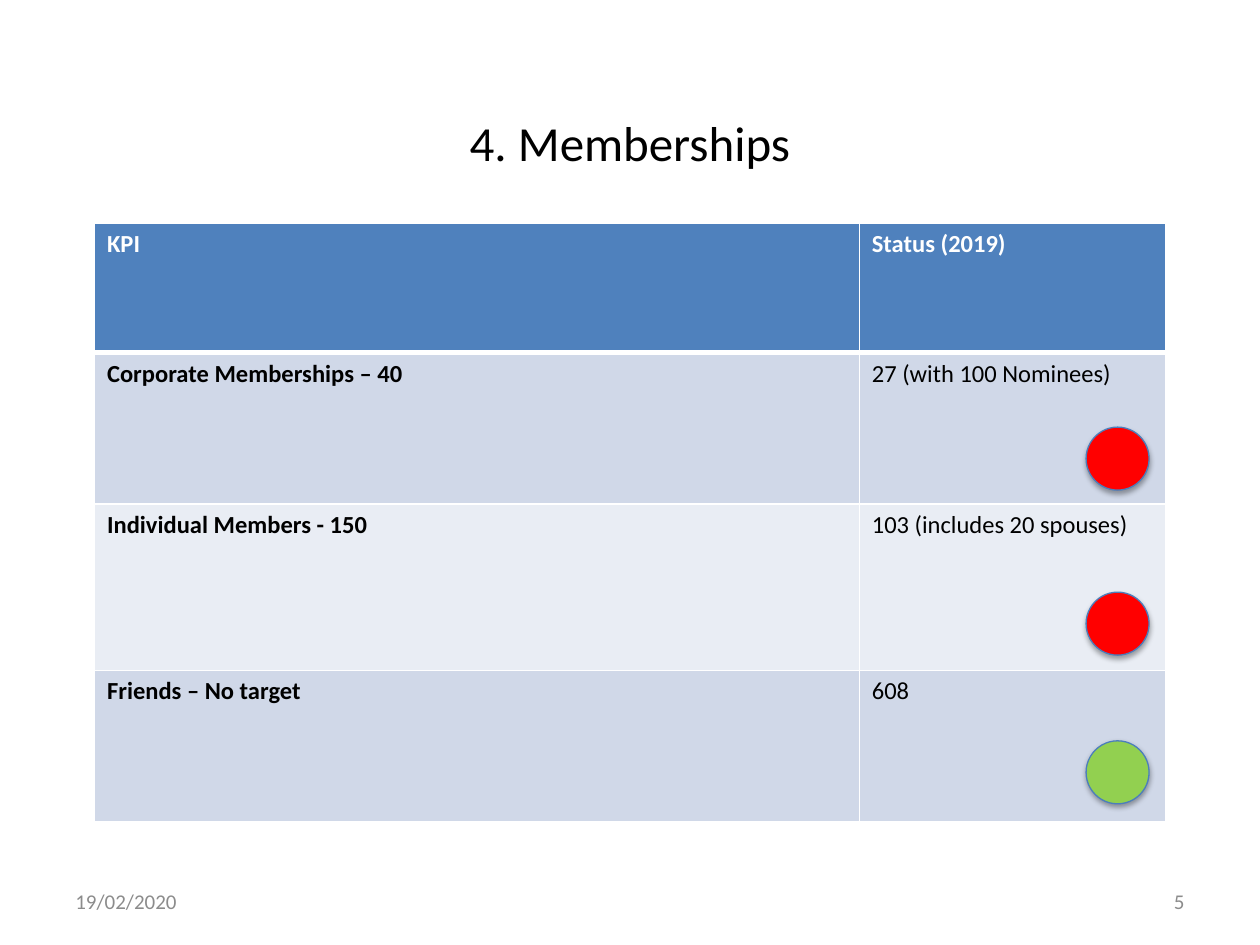
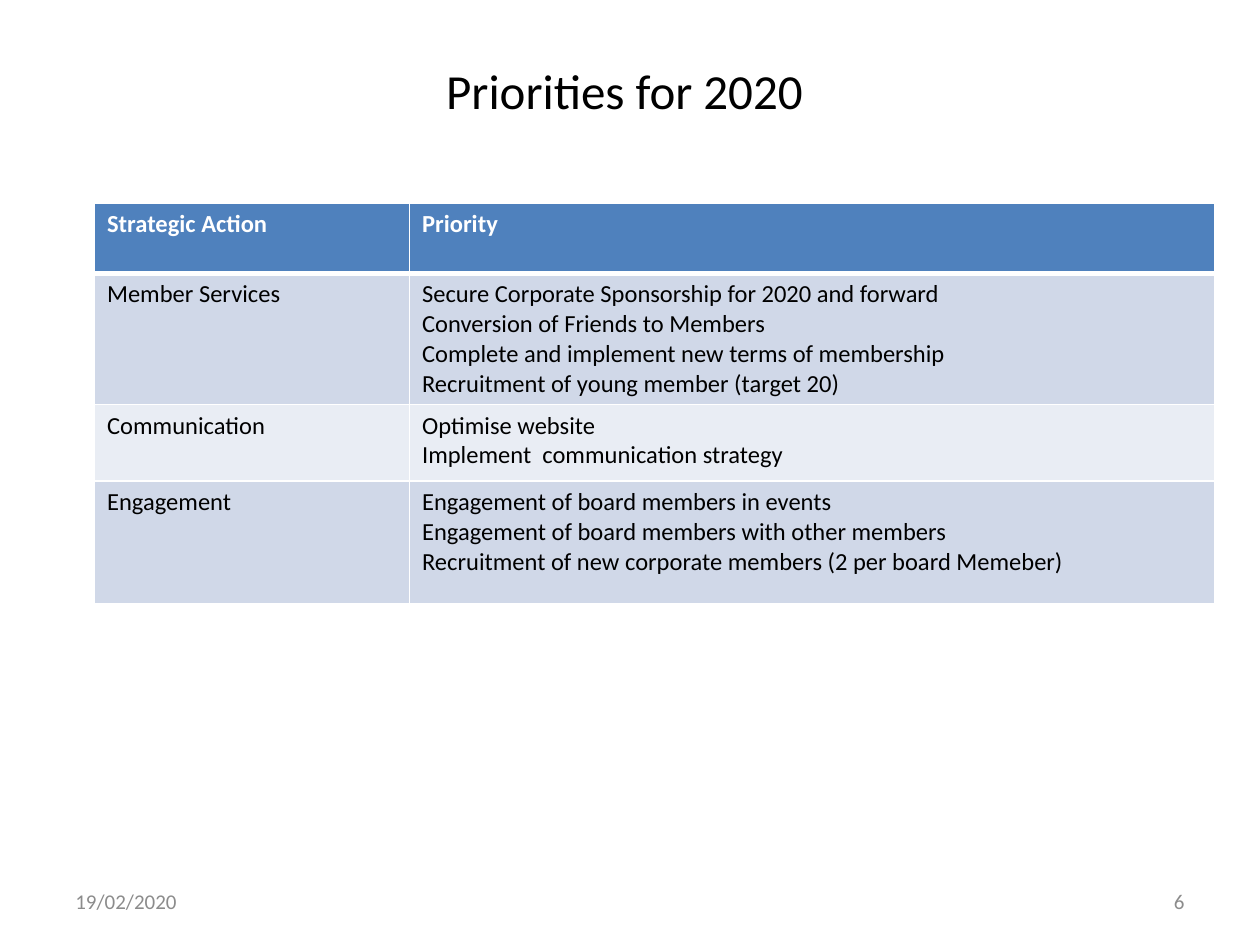
"""Build two slides: membership KPIs and the priorities for 2020."""
from lxml import etree
from pptx import Presentation
from pptx.dml.color import RGBColor
from pptx.enum.shapes import MSO_SHAPE
from pptx.enum.text import MSO_ANCHOR as ANCHOR, PP_ALIGN as ALIGN
from pptx.oxml import parse_xml
from pptx.oxml.ns import nsdecls, qn
from pptx.util import Inches, Pt

COLORS = {
    "black": "000000", "white": "FFFFFF", "grey": "8C8C8C",
    "header": "4F81BD", "band": "D0D8E8", "light": "E9EDF4",
    "outline": "4B7EBC", "red": "FF0000", "green": "92D050",
}
FORMATS = {
    "title": {"size": Pt(28), "color": "black"},
    "footer": {"size": Pt(12), "color": "grey"},
    "head": {"size": Pt(14), "color": "white", "bold": True},
    "label": {"size": Pt(14), "color": "black", "bold": True},
    "body": {"size": Pt(14), "color": "black", "bold": False},
}
FONT = "Calibri"
DATE = "19/02/2020"


class Deck:
    def __init__(self):
        self.prs = Presentation()
        self.prs.slide_width, self.prs.slide_height = Inches(10), Inches(7.5)

    def rgb(self, color):
        return RGBColor.from_string(COLORS[color])

    def slide(self, title, title_top, number):
        self.s = self.prs.slides.add_slide(self.prs.slide_layouts[6])
        self.text(title, (0.75, title_top, 8.5, 1.29), "title", ALIGN.CENTER)
        self.text(DATE, (0.5, 6.95, 2.33, 0.4), "footer", ALIGN.LEFT)
        self.text(str(number), (7.17, 6.95, 2.33, 0.4), "footer", ALIGN.RIGHT)

    def fill_text(self, tf, lines, style, align=ALIGN.LEFT):
        for i, line in enumerate(lines):
            p = tf.add_paragraph() if i else tf.paragraphs[0]
            p.alignment = align
            r = p.add_run()
            r.text = line
            r.font.name = FONT
            for name, value in FORMATS[style].items():
                if name == "color":
                    r.font.color.rgb = self.rgb(value)
                else:
                    setattr(r.font, name, value)

    def text(self, text, box, style, align):
        tf = self.s.shapes.add_textbox(*map(Inches, box)).text_frame
        tf.word_wrap = True
        tf.vertical_anchor = ANCHOR.MIDDLE
        self.fill_text(tf, [text], style, align)

    def borders(self, cell, top, bottom):
        tc_pr = cell._tc.get_or_add_tcPr()
        widths = {"lnL": 1, "lnR": 1, "lnT": top, "lnB": bottom}
        for i, (side, width) in enumerate(widths.items()):
            ln = parse_xml(f'<a:{side} {nsdecls("a")} w="{Pt(width)}"><a:solidFill>'
                           f'<a:srgbClr val="{COLORS["white"]}"/></a:solidFill></a:{side}>')
            tc_pr.insert(i, ln)

    def table(self, top, widths, heights, rows, label_style):
        box = (0.75, top, sum(widths), sum(heights))
        frame = self.s.shapes.add_table(len(rows), len(widths), *map(Inches, box))
        table = frame.table
        for col, width in zip(table.columns, widths):
            col.width = Inches(width)
        for i, (height, row) in enumerate(zip(heights, rows)):
            table.rows[i].height = Inches(height)
            fill = "header" if i == 0 else "band" if i % 2 else "light"
            for j, lines in enumerate(row):
                cell = table.cell(i, j)
                cell.fill.solid()
                cell.fill.fore_color.rgb = self.rgb(fill)
                self.borders(cell, 3 if i == 1 else 1, 3 if i == 0 else 1)
                style = "head" if i == 0 else "body" if j else label_style
                self.fill_text(cell.text_frame, lines, style)

    def status(self, top, color):
        box = (8.62, top, 0.5, 0.5)
        sp = self.s.shapes.add_shape(MSO_SHAPE.FLOWCHART_CONNECTOR, *map(Inches, box))
        sp.fill.solid()
        sp.fill.fore_color.rgb = self.rgb(color)
        sp.line.color.rgb = self.rgb("outline")
        sp.line.width = Pt(0.75)
        sp.shadow.inherit = False
        effects = sp._element.spPr.find(qn("a:effectLst"))
        shadow = etree.SubElement(effects, qn("a:outerShdw"), blurRad=str(Pt(3.1)),
                                  dist=str(Pt(1.8)), dir="5400000", rotWithShape="0")
        tint = etree.SubElement(shadow, qn("a:srgbClr"), val=COLORS["black"])
        etree.SubElement(tint, qn("a:alpha"), val="35000")


def main():
    deck = Deck()
    deck.slide("4. Memberships", 0.48, 5)
    deck.table(1.77, [6.07, 2.43], [1.03, 1.2, 1.32, 1.2], [
        (["KPI"], ["Status (2019)"]),
        (["Corporate Memberships – 40"], ["27 (with 100 Nominees)"]),
        (["Individual Members - 150"], ["103 (includes 20 spouses)"]),
        (["Friends – No target"], ["608"]),
    ], "label")
    for top, color in ((3.39, "red"), (4.7, "red"), (5.88, "green")):
        deck.status(top, color)

    deck.slide("Priorities for 2020 ", 0.07, 6)
    deck.table(1.61, [2.5, 6.39], [0.56, 1.04, 0.61, 0.97], [
        (["Strategic Action"], ["Priority"]),
        (["Member Services"], [
            "Secure Corporate Sponsorship for 2020 and forward",
            "Conversion of Friends to Members",
            "Complete and implement new terms of membership",
            "Recruitment of young member (target 20)"]),
        (["Communication"], [
            "Optimise website",
            "Implement  communication strategy"]),
        (["Engagement"], [
            "Engagement of board members in events",
            "Engagement of board members with other members",
            "Recruitment of new corporate members (2 per board Memeber)"]),
    ], "body")
    deck.prs.save("out.pptx")


if __name__ == "__main__":
    main()
